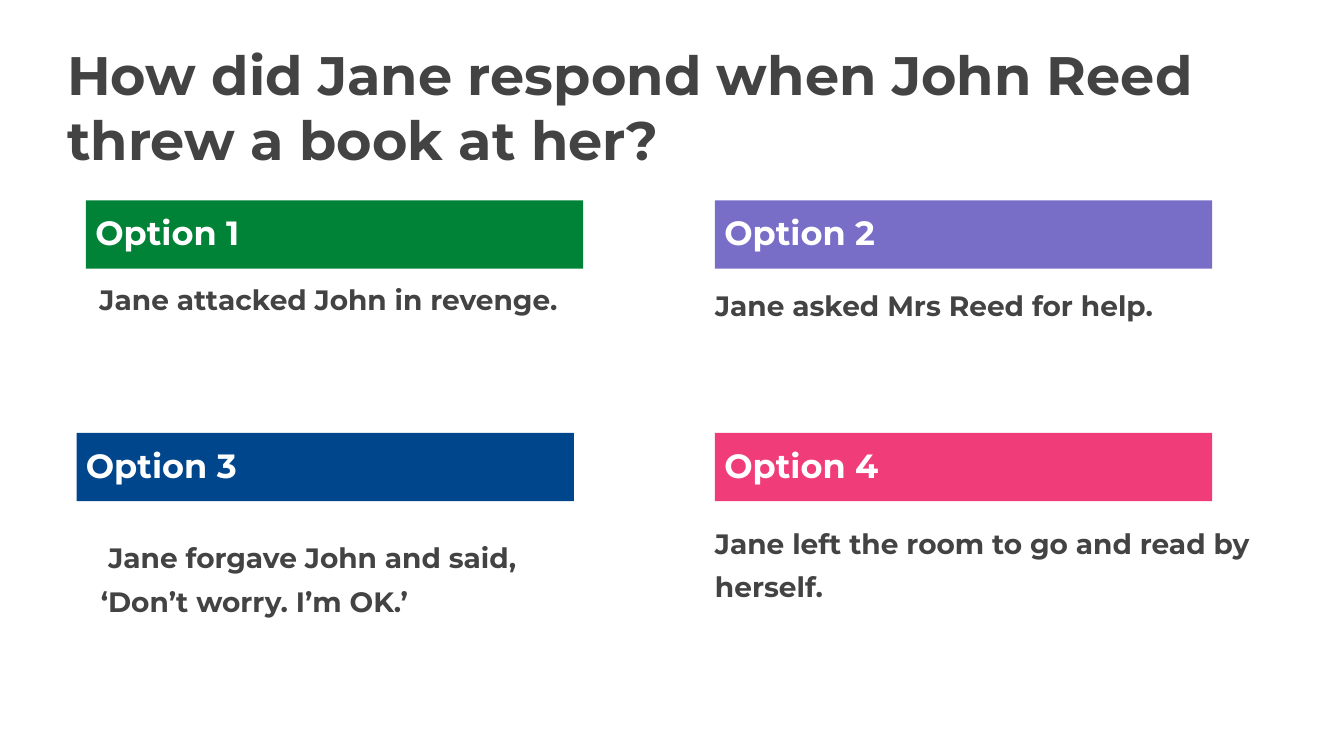
from pptx import Presentation
from pptx.dml.color import RGBColor
from pptx.enum import shapes, text
from pptx.util import Pt

COLORS = {
    "ink": "434343",
    "white": "FFFFFF",
    "green": "008237",
    "purple": "786EC8",
    "blue": "00468C",
    "pink": "F03C78",
}
BAR_WIDTH, BAR_HEIGHT = 266.4, 36.72
TOP_ROW, BOTTOM_ROW = 107.28, 231.84
RIGHT_COLUMN = 383.04


def write(shape, words, size, color, spacing=1.0, indent=0, first_line=0):
    frame = shape.text_frame
    frame.text = words
    frame.word_wrap = True
    frame.auto_size = text.MSO_AUTO_SIZE.NONE
    frame.vertical_anchor = text.MSO_ANCHOR.TOP
    frame.margin_left = frame.margin_right = 0
    frame.margin_top = frame.margin_bottom = 0
    para = frame.paragraphs[0]
    para.alignment = text.PP_ALIGN.LEFT
    para.line_spacing = spacing
    properties = para._p.get_or_add_pPr()
    properties.set("marL", str(Pt(indent)))
    properties.set("indent", str(Pt(first_line)))
    font = para.runs[0].font
    font.name = "Montserrat"
    font.size = Pt(size)
    font.bold = True
    font.color.rgb = RGBColor.from_string(COLORS[color])


deck = Presentation()
deck.slide_width, deck.slide_height = Pt(720), Pt(405)
page = deck.slides.add_slide(deck.slide_layouts[5])

title = page.shapes.title
title.left, title.top, title.width, title.height = Pt(36), Pt(22.32), Pt(624.24), Pt(64.08)
write(title, "How did Jane respond when John Reed threw a book at her?", 29, "ink")

options = [
    ("Option 1", 46.08, TOP_ROW, "green"),
    ("Option 2", RIGHT_COLUMN, TOP_ROW, "purple"),
    ("Option 3", 41.04, BOTTOM_ROW, "blue"),
    ("Option 4", RIGHT_COLUMN, BOTTOM_ROW, "pink"),
]
for label, left, top, color in options:
    bar = page.shapes.add_shape(
        shapes.MSO_SHAPE.RECTANGLE, Pt(left), Pt(top), Pt(BAR_WIDTH), Pt(BAR_HEIGHT)
    )
    bar.name = label
    bar.shadow.inherit = False
    bar.fill.solid()
    bar.fill.fore_color.rgb = RGBColor.from_string(COLORS[color])
    bar.line.fill.background()
    write(bar, label, 18, "white", spacing=1.3, indent=5)

answers = [
    ("Jane attacked John in revenge.", 46.08, 151.2, 279.36, 58.32, 1.0, 7.2, 0),
    ("Jane asked Mrs Reed for help.", RIGHT_COLUMN, 154.8, 279.36, 47.52, 1.0, 0, 0),
    ("Jane forgave John and said, ‘Don’t worry. I’m OK.’", 39.6, 284.4, 279.36, 110, 1.3, 14.4, 4),
    ("Jane left the room to go and read by herself.", RIGHT_COLUMN, 276.48, 293.04, 110, 1.3, 0, 0),
]
for words, left, top, width, height, spacing, indent, first_line in answers:
    box = page.shapes.add_textbox(Pt(left), Pt(top), Pt(width), Pt(height))
    write(box, words, 15, "ink", spacing, indent, first_line)

deck.save("out.pptx")
